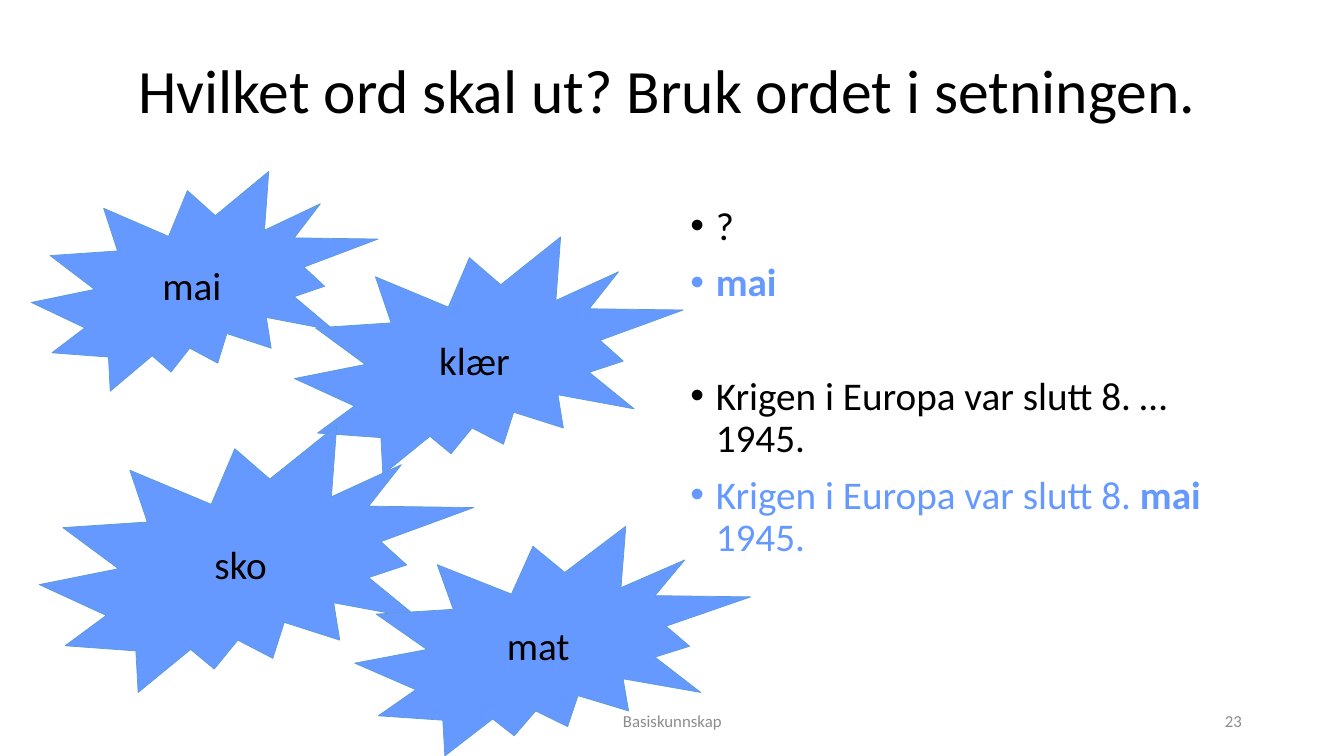
from lxml import etree
from pptx import Presentation
from pptx.dml.color import RGBColor
from pptx.enum.shapes import MSO_SHAPE
from pptx.enum.text import MSO_ANCHOR, MSO_AUTO_SIZE, PP_ALIGN
from pptx.oxml.ns import qn
from pptx.util import Cm, Pt

LEFT, CENTER, RIGHT = PP_ALIGN.LEFT, PP_ALIGN.CENTER, PP_ALIGN.RIGHT
TOP, MIDDLE = MSO_ANCHOR.TOP, MSO_ANCHOR.MIDDLE
NO_AUTOFIT = MSO_AUTO_SIZE.NONE
BURST = MSO_SHAPE.EXPLOSION2
TITLE_ONLY = 5

FONT = "Calibri"
BLACK, BLUE, OUTLINE, GRAY = "000000", "6699FF", "5B9BD5", "8C8C8C"
BULLET_INDENT = Cm(0.64)
BULLET_GAP, GROUP_GAP = 10, 51

BURSTS = [
    ("mai", 0.79, 4.32, 8.74, 5.54),
    ("klær", 7.42, 5.97, 9.8, 5.99),
    ("sko", 0.99, 10.72, 10.95, 6.73),
    ("mat", 8.94, 13.26, 9.98, 5.79),
]
BULLETS = [
    (BLACK, BULLET_GAP, [("?", False)]),
    (BLUE, BULLET_GAP, [("mai", True)]),
    (BLACK, GROUP_GAP, [("Krigen i Europa var slutt 8. … 1945.", False)]),
    (BLUE, BULLET_GAP, [("Krigen i Europa var slutt 8. ", False),
                        ("mai ", True), ("1945.", False)]),
]


def color(hex_string):
    """Return the colour for a hex string."""
    return RGBColor.from_string(hex_string)


def apply_format(target, values):
    """Set each named attribute on the target."""
    for name, value in values.items():
        setattr(target, name, value)


def add_run(paragraph, text, size, hex_string, bold=False):
    """Append a formatted run to a paragraph."""
    run = paragraph.add_run()
    run.text = text
    apply_format(run.font, {"name": FONT, "size": Pt(size), "bold": bold})
    run.font.color.rgb = color(hex_string)


def write_line(shape, text, size, hex_string, alignment):
    """Write one vertically centred paragraph in a shape."""
    apply_format(shape.text_frame, {"word_wrap": True, "auto_size": NO_AUTOFIT,
                                    "vertical_anchor": MIDDLE})
    paragraph = shape.text_frame.paragraphs[0]
    apply_format(paragraph, {"alignment": alignment})
    add_run(paragraph, text, size, hex_string)
    return paragraph


def set_title(slide, text):
    """Place and format the title placeholder."""
    title = slide.shapes.title
    apply_format(title, {"left": Cm(3.23), "top": Cm(0.51),
                         "width": Cm(29.21), "height": Cm(3.68)})
    write_line(title, text, 44, BLACK, LEFT).line_spacing = 0.9


def add_label(slide, text, left, width, alignment):
    """Add a small gray text at the foot of the slide."""
    box = slide.shapes.add_textbox(Cm(left), Cm(17.65), Cm(width), Cm(1.02))
    write_line(box, text, 12, GRAY, alignment)


def add_burst(slide, word, left, top, width, height):
    """Add a blue burst that holds one word."""
    burst = slide.shapes.add_shape(BURST, Cm(left), Cm(top), Cm(width), Cm(height))
    burst.shadow.inherit = False
    burst.fill.solid()
    burst.fill.fore_color.rgb = color(BLUE)
    burst.line.color.rgb = color(OUTLINE)
    burst.line.width = Pt(0.5)
    write_line(burst, word, 28, BLACK, CENTER)


def set_bullet(paragraph):
    """Give a paragraph a hanging round bullet."""
    properties = paragraph._p.get_or_add_pPr()
    properties.set("marL", str(BULLET_INDENT))
    properties.set("indent", str(-BULLET_INDENT))
    etree.SubElement(properties, qn("a:buFont")).set("typeface", "Arial")
    etree.SubElement(properties, qn("a:buChar")).set("char", "•")


def add_bullets(slide, bullets):
    """Add the bulleted text on the right."""
    box = slide.shapes.add_textbox(Cm(17.15), Cm(5.08), Cm(14.4), Cm(12.09))
    frame = box.text_frame
    apply_format(frame, {"word_wrap": True, "vertical_anchor": TOP})
    for index, (hex_string, gap, runs) in enumerate(bullets):
        paragraph = frame.add_paragraph() if index else frame.paragraphs[0]
        set_bullet(paragraph)
        apply_format(paragraph, {"line_spacing": 0.9, "space_before": Pt(gap)})
        for text, bold in runs:
            add_run(paragraph, text, 28, hex_string, bold)


def main():
    """Build the slide and save it."""
    presentation = Presentation()
    apply_format(presentation, {"slide_width": Cm(33.87), "slide_height": Cm(19.05)})
    slide = presentation.slides.add_slide(presentation.slide_layouts[TITLE_ONLY])
    set_title(slide, "Hvilket ord skal ut? Bruk ordet i setningen.")
    add_bullets(slide, BULLETS)
    add_label(slide, "23", 23.93, 7.62, RIGHT)
    for burst in BURSTS:
        add_burst(slide, *burst)
    add_label(slide, "Basiskunnskap", 11.23, 11.43, CENTER)
    presentation.save("out.pptx")


if __name__ == "__main__":
    main()
